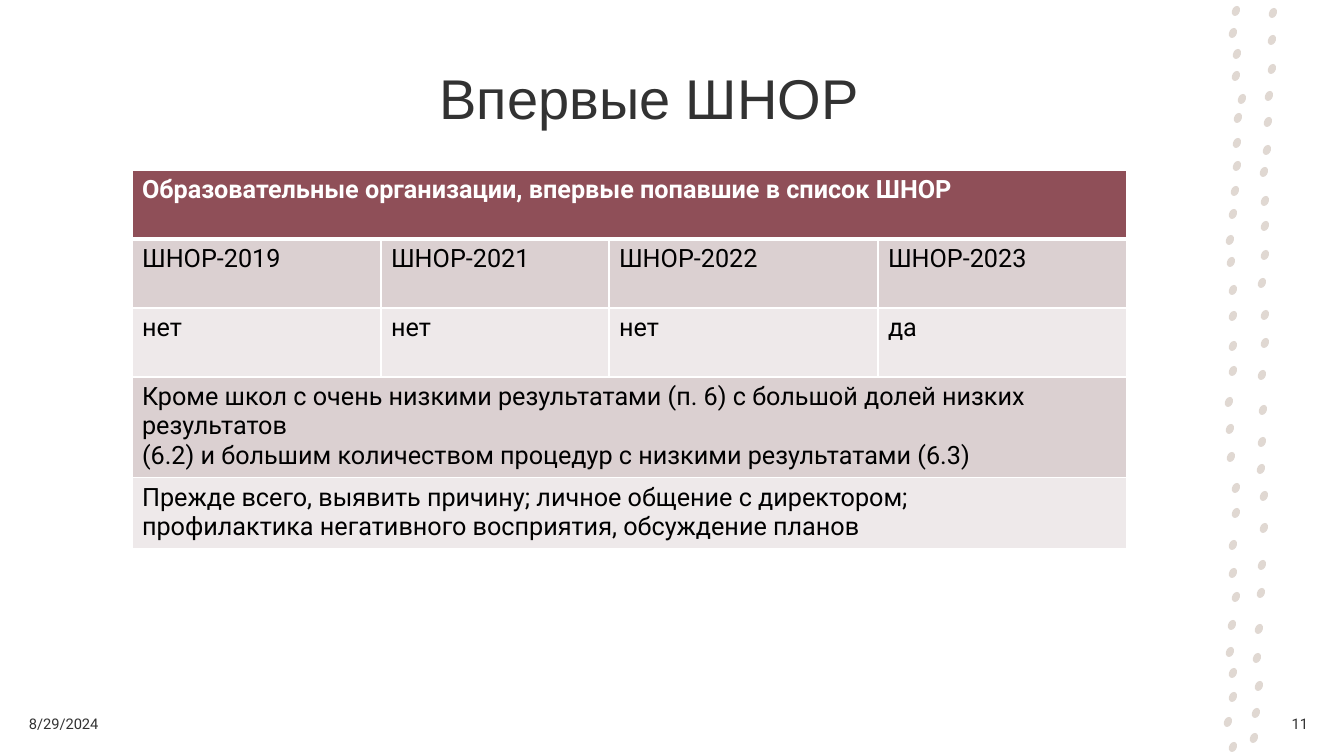
from math import cos, sin, tau

from lxml.etree import SubElement as Sub
from pptx import Presentation
from pptx.dml.color import RGBColor as Rgb
from pptx.enum.text import MSO_ANCHOR as Anchor, PP_ALIGN as Align
from pptx.oxml.ns import qn
from pptx.util import Pt

PX = 914400 / 100.8
HUES = {"ink": "323232", "dot": "E0D8D2", "head": "8F4F58", "dark": "DBD0D1",
        "light": "EEE9EA", "white": "FFFFFF", "black": "000000"}


def emu(*px):
    return [round(n * PX) for n in px]


def style(para, text, size, hue, face="Roboto", bold=False):
    para.text = text
    font = para.font
    font.size, font.name, font.bold = Pt(size), face, bold
    font.color.rgb = Rgb.from_string(HUES[hue])


prs = Presentation()
prs.slide_width, prs.slide_height = emu(1344, 756)
slide = prs.slides.add_slide(prs.slide_layouts[6])
shapes = slide.shapes

# Two trails of small dots down the right edge
left = [(1236, 11), (1233, 33), (1237, 54), (1236, 76), (1242, 99),
        (1238, 118), (1237, 143), (1237, 166), (1235, 191), (1233, 214),
        (1230, 240), (1231, 262), (1233, 290), (1233, 316), (1233, 346),
        (1233, 371), (1229, 402), (1230, 429), (1231, 457), (1236, 488),
        (1236, 513), (1233, 545), (1233, 573), (1236, 597), (1232, 625),
        (1230, 652), (1233, 673), (1233, 697), (1228, 722), (1233, 747)]
right = [(1273, 13), (1272, 40), (1272, 69), (1269, 96), (1268, 122),
         (1267, 150), (1264, 172), (1265, 201), (1265, 226), (1265, 255),
         (1262, 283), (1265, 315), (1265, 343), (1262, 375), (1263, 410),
         (1262, 442), (1261, 469), (1264, 496), (1264, 528), (1262, 565),
         (1261, 593), (1259, 629), (1257, 658), (1259, 686), (1256, 713),
         (1254, 738)]
for x, y in left + right:
    ring = []
    for k in range(12):
        turn = tau * k / 12
        ring.append(emu(x + 4 * cos(turn) - sin(turn), y + 5 * sin(turn)))
    pen = shapes.build_freeform(*ring[0], scale=1.0)
    pen.add_line_segments(ring[1:], close=True)
    dot = pen.convert_to_shape()
    dot.shadow.inherit = False
    dot.fill.solid()
    dot.fill.fore_color.rgb = Rgb.from_string(HUES["dot"])
    dot.line.fill.background()

# Title, date and page number
labels = [("Впервые ШНОР", (118, 55, 1062, 84), 40, "Arial", Align.CENTER),
          ("8/29/2024", (19, 704, 313, 40), 10.5, "Roboto", Align.LEFT),
          ("11", (1263, 704, 55, 40), 10.5, "Roboto", Align.RIGHT)]
for text, spot, size, face, align in labels:
    frame = shapes.add_textbox(*emu(*spot)).text_frame
    frame.word_wrap = True
    frame.vertical_anchor = Anchor.MIDDLE
    para = frame.paragraphs[0]
    style(para, text, size, "ink", face)
    para.alignment = align

# Table: rows with a single entry span all columns
rows = [
    ("head", ["Образовательные организации, впервые попавшие в список ШНОР"]),
    ("dark", ["ШНОР-2019", "ШНОР-2021", "ШНОР-2022", "ШНОР-2023"]),
    ("light", ["нет", "нет", "нет", "да"]),
    ("dark", ["Кроме школ с очень низкими результатами (п. 6) с большой долей "
              "низких результатов\n"
              "(6.2) и большим количеством процедур с низкими результатами (6.3)"]),
    ("light", ["Прежде всего, выявить причину; личное общение с директором;\n"
               "профилактика негативного восприятия, обсуждение планов"]),
]
wide = [249, 228, 269, 249]
high = 69
table = shapes.add_table(len(rows), len(wide), *emu(132, 170, sum(wide), high * len(rows))).table
for col, width in zip(table.columns, emu(*wide)):
    col.width = width

for r, (hue, texts) in enumerate(rows):
    table.rows[r].height = emu(high)[0]
    if len(texts) == 1:
        table.cell(r, 0).merge(table.cell(r, len(wide) - 1))
    for c in range(len(wide)):
        cell = table.cell(r, c)
        # White borders, heavier under the header
        props = cell._tc.get_or_add_tcPr()
        for side in "LRTB":
            thick = (r, side) in ((0, "B"), (1, "T"))
            line = Sub(props, qn(f"a:ln{side}"), w=str(Pt(3 if thick else 1)))
            Sub(Sub(line, qn("a:solidFill")), qn("a:srgbClr"), val=HUES["white"])
        cell.fill.solid()
        cell.fill.fore_color.rgb = Rgb.from_string(HUES[hue])
        if c < len(texts):
            frame = cell.text_frame
            for i, text in enumerate(texts[c].split("\n")):
                para = frame.add_paragraph() if i else frame.paragraphs[0]
                style(para, text, 18, "black" if r else "white", bold=r == 0)

prs.save("out.pptx")
